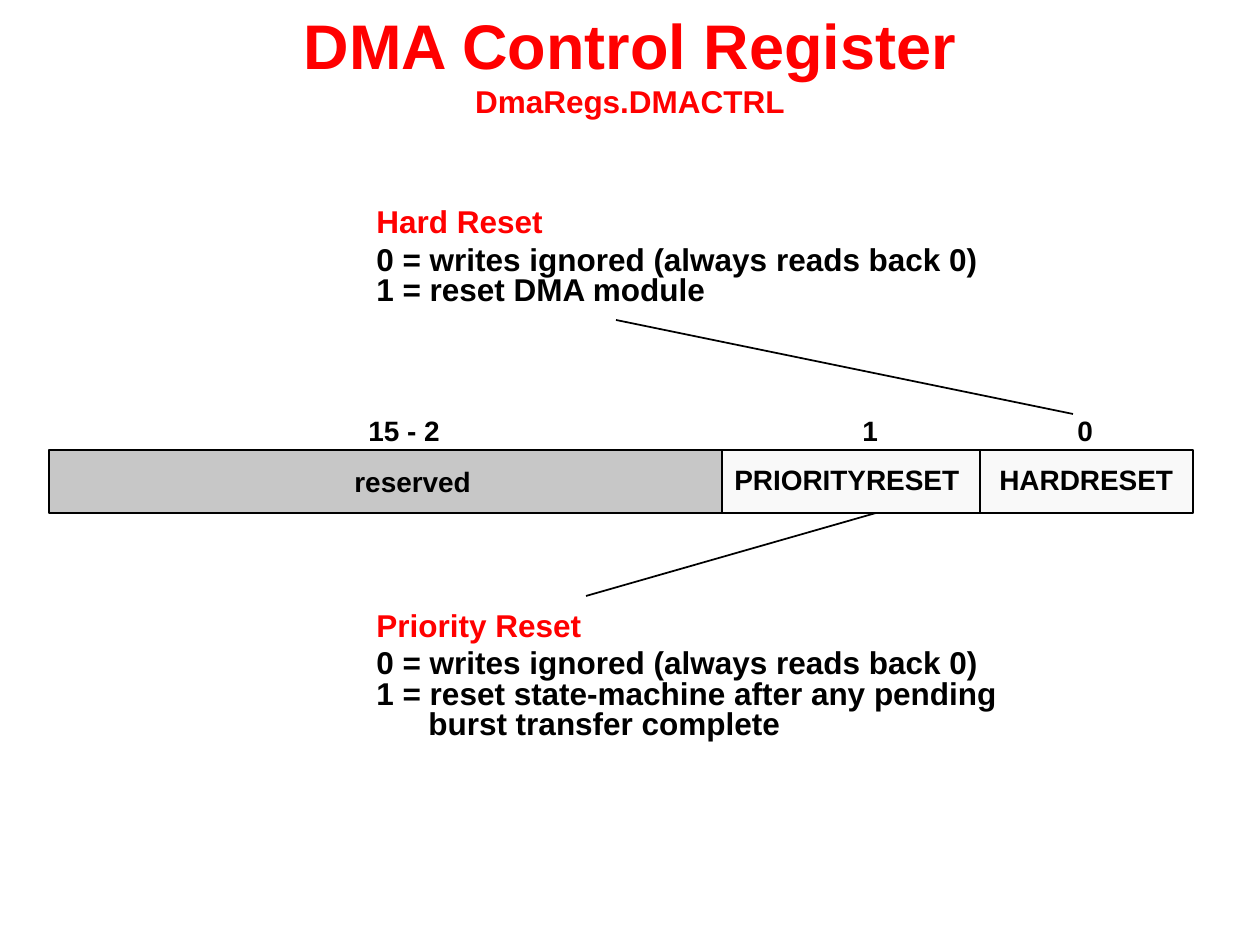
from lxml import etree
from pptx import Presentation
from pptx.dml.color import RGBColor
from pptx.enum.shapes import MSO_CONNECTOR as LINE, MSO_SHAPE as SHAPE
from pptx.enum.text import MSO_ANCHOR as ANCHOR, MSO_AUTO_SIZE as FIT, PP_ALIGN as ALIGN
from pptx.oxml.ns import qn
from pptx.util import Emu, Pt

SCALE = 914400 / 126
COLORS = {"red": "FF0000", "black": "000000", "reserved": "C7C7C7", "field": "F9F9F9"}


def px(*lengths):
    return [Emu(round(length * SCALE)) for length in lengths]


def add_run(paragraph, words, size, color):
    run = paragraph.add_run()
    run.text = words
    run.font.name = "Arial"
    run.font.size = Pt(size)
    run.font.bold = True
    run.font.color.rgb = RGBColor.from_string(COLORS[color])


prs = Presentation()
prs.slide_width, prs.slide_height = px(1260, 945)
slide = prs.slides.add_slide(prs.slide_layouts[6])
shapes = slide.shapes

# Title
title = shapes.add_textbox(*px(0, 0, 1260, 127)).text_frame
title.word_wrap = True
title.vertical_anchor = ANCHOR.MIDDLE
heading = title.paragraphs[0]
heading.alignment = ALIGN.CENTER
add_run(heading, "DMA Control Register", 36, "red")
heading.add_line_break()
add_run(heading, "DmaRegs.DMACTRL", 18, "red")

# Register bar
BAR_TOP, BAR_HEIGHT = 450, 63
BAR_BOTTOM = BAR_TOP + BAR_HEIGHT
for left, width, color in [(722, 471, "field"), (49, 673, "reserved")]:
    field = shapes.add_shape(SHAPE.RECTANGLE, *px(left, BAR_TOP, width, BAR_HEIGHT))
    field.shadow.inherit = False
    field.fill.solid()
    field.fill.fore_color.rgb = RGBColor.from_string(COLORS[color])
    field.line.color.rgb = RGBColor.from_string(COLORS["black"])
    field.line.width = Pt(1)

# Field divider and the two leader lines
for ends in [
    (980, BAR_TOP, 980, BAR_BOTTOM),
    (1073, 414, 616, 320),
    (876, BAR_BOTTOM, 586, 596),
]:
    leader = shapes.add_connector(LINE.STRAIGHT, *px(*ends))
    leader.line.color.rgb = RGBColor.from_string(COLORS["black"])
    leader.line.width = Pt(1)
    etree.SubElement(leader.element.spPr, qn("a:effectLst"))

# Bit numbers and field names
BITS_TOP, NAMES_TOP = 414, 463
for words, left, top, width in [
    ("15 - 2", 356, BITS_TOP, 97),
    ("1", 850, BITS_TOP, 40),
    ("0", 1065, BITS_TOP, 40),
    ("reserved", 342, 465, 142),
    ("PRIORITYRESET", 722, NAMES_TOP, 252),
    ("HARDRESET", 987, NAMES_TOP, 200),
]:
    label = shapes.add_textbox(*px(left, top, width, 39)).text_frame
    label.word_wrap = False
    label.auto_size = FIT.SHAPE_TO_FIT_TEXT
    label.paragraphs[0].line_spacing = 0.8
    add_run(label.paragraphs[0], words, 16, "black")

# Bit descriptions: name, top, width, height, (line, indent) pairs
IGNORED = ("0 = writes ignored (always reads back 0)", 0)
for name, top, width, height, meanings in [
    ("Hard Reset", 203, 630, 111, [IGNORED, ("1 = reset DMA module", 0)]),
    ("Priority Reset", 607, 649, 141, [
        IGNORED,
        ("1 = reset state-machine after any pending", 0),
        ("burst transfer complete", 52),
    ]),
]:
    description = shapes.add_textbox(*px(364, top, width, height)).text_frame
    description.word_wrap = False
    description.auto_size = FIT.SHAPE_TO_FIT_TEXT
    description.vertical_anchor = ANCHOR.MIDDLE
    bit_name = description.paragraphs[0]
    bit_name.line_spacing = 0.8
    bit_name.space_after = Pt(4)
    add_run(bit_name, name, 18, "red")
    for words, indent in meanings:
        meaning = description.add_paragraph()
        meaning.line_spacing = 0.8
        if indent:
            meaning._p.get_or_add_pPr().set("marL", str(px(indent)[0]))
        add_run(meaning, words, 18, "black")

prs.save("out.pptx")
